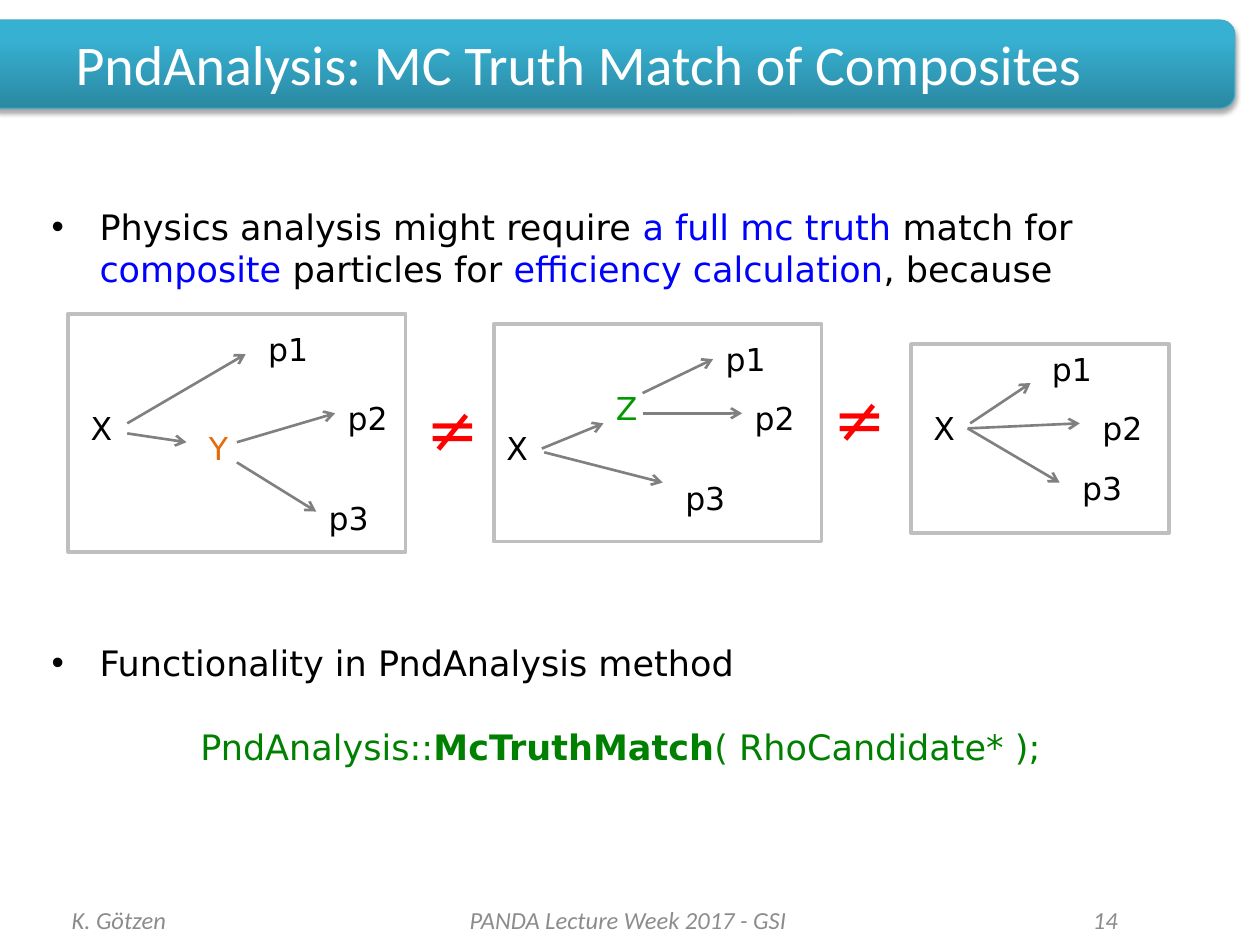
from pptx import Presentation
from pptx.dml.color import RGBColor
from pptx.enum.shapes import MSO_CONNECTOR as Line, MSO_SHAPE as Preset
from pptx.enum.text import MSO_ANCHOR as Anchor, MSO_AUTO_SIZE as Fit, PP_ALIGN as Align
from pptx.oxml import parse_xml
from pptx.oxml.ns import nsdecls
from pptx.util import Inches, Pt

WHITE = RGBColor(0xFF, 0xFF, 0xFF)
BLACK = RGBColor(0x00, 0x00, 0x00)
BLUE = RGBColor(0x00, 0x00, 0xFF)
GREEN = RGBColor(0x00, 0x80, 0x00)
LIGHT_GREEN = RGBColor(0x00, 0x99, 0x00)
ORANGE = RGBColor(0xE4, 0x6C, 0x0A)
RED = RGBColor(0xFF, 0x00, 0x00)
ARROW_GREY = RGBColor(0x80, 0x80, 0x80)
FRAME_GREY = RGBColor(0xBF, 0xBF, 0xBF)
FOOTER_GREY = RGBColor(0x8C, 0x8C, 0x8C)
TEAL_DARK = RGBColor(0x2A, 0x88, 0xA2)
TEAL_LIGHT = RGBColor(0x37, 0xB1, 0xD2)
TEAL_EDGE = RGBColor(0x46, 0xAA, 0xC5)

COLUMNS, ROWS = 100, 75
HEADING_FONT, TEXT_FONT = "Calibri", "DejaVu Sans"


class LecturePage:
    """Style and current slide; lengths are columns and rows of the grid."""

    def __init__(self, deck):
        self.column = deck.slide_width / COLUMNS
        self.row = deck.slide_height / ROWS
        self.page = deck.slides.add_slide(deck.slide_layouts[1])
        self.shapes = self.page.shapes

    def place(self, *cells):
        steps = (self.column, self.row) * 2
        return [round(cell * step) for cell, step in zip(cells, steps)]

    def move(self, box, cells):
        box.left, box.top, box.width, box.height = self.place(*cells)

    def add_span(self, para, text, size, color, font=TEXT_FONT, bold=False, italic=False):
        span = para.add_run()
        span.text = text
        span.font.name, span.font.size = font, Pt(size)
        span.font.bold, span.font.italic = bold, italic
        span.font.color.rgb = color

    def banner(self, cells):
        bar = self.shapes.add_shape(Preset.ROUNDED_RECTANGLE, *self.place(*cells))
        bar.fill.gradient()
        bar.fill.gradient_angle = 90
        stops = zip(bar.fill.gradient_stops, (0, 0.8), (TEAL_DARK, TEAL_LIGHT))
        for stop, position, color in stops:
            stop.position, stop.color.rgb = position, color
        bar.line.color.rgb, bar.line.width = TEAL_EDGE, Pt(0.75)
        bar._element.spPr.append(parse_xml(
            f'<a:effectLst {nsdecls("a")}><a:outerShdw blurRad="{Pt(3.1)}" '
            f'dist="{Pt(1.8)}" dir="5400000" rotWithShape="0"><a:srgbClr val="000000">'
            '<a:alpha val="35000"/></a:srgbClr></a:outerShdw></a:effectLst>'))
        # Behind the title
        self.shapes._spTree.insert(2, bar._element)

    def title(self, cells, text):
        box = self.shapes.title
        self.move(box, cells)
        frame = box.text_frame
        frame.auto_size, frame.vertical_anchor = Fit.NONE, Anchor.MIDDLE
        frame.paragraphs[0].alignment = Align.LEFT
        self.add_span(frame.paragraphs[0], text, 32, WHITE, HEADING_FONT)

    def body(self, cells, top_inset, items):
        box = self.page.placeholders[1]
        self.move(box, cells)
        frame = box.text_frame
        frame.auto_size, frame.margin_top = Fit.NONE, Inches(top_inset)
        for number, (gap, indent, bullet, spans) in enumerate(items):
            para = frame.add_paragraph() if number else frame.paragraphs[0]
            para.space_before, para.line_spacing = Pt(gap), 1.0
            props = para._p.get_or_add_pPr()
            props.set("marL", str(Inches(indent)))
            props.set("indent", str(Inches(-indent if bullet else 0)))
            mark = '<a:buChar {} char="•"/>' if bullet else "<a:buNone {}/>"
            props.append(parse_xml(mark.format(nsdecls("a"))))
            for text, color, bold in spans:
                self.add_span(para, text, 20, color, bold=bold)

    def label(self, cells, text, color=BLACK, size=18):
        box = self.shapes.add_textbox(*self.place(*cells))
        box.text_frame.word_wrap = False
        box.text_frame.auto_size = Fit.SHAPE_TO_FIT_TEXT
        self.add_span(box.text_frame.paragraphs[0], text, size, color)

    def arrow(self, cells):
        link = self.shapes.add_connector(Line.STRAIGHT, *self.place(*cells))
        link.line.color.rgb, link.line.width = ARROW_GREY, Pt(1.5)
        link.line._get_or_add_ln().append(
            parse_xml(f'<a:tailEnd {nsdecls("a")} type="arrow"/>'))
        link._element.spPr.append(parse_xml(f'<a:effectLst {nsdecls("a")}/>'))

    def frame(self, cells):
        border = self.shapes.add_shape(Preset.RECTANGLE, *self.place(*cells))
        border.shadow.inherit = False
        border.fill.background()
        border.line.color.rgb, border.line.width = FRAME_GREY, Pt(2)

    def decay(self, frame, particles, arrows):
        for left, top, name, color in particles:
            self.label((left, top, 5.2 if len(name) > 1 else 3.8, 4), name, color)
        for ends in arrows:
            self.arrow(ends)
        self.frame(frame)

    def footer(self, left, width, text, align):
        box = self.shapes.add_textbox(*self.place(left, 71, width, 4))
        box.text_frame.word_wrap = True
        box.text_frame.vertical_anchor = Anchor.MIDDLE
        para = box.text_frame.paragraphs[0]
        para.alignment = align
        self.add_span(para, text, 14, FOOTER_GREY, HEADING_FONT, italic=True)


# Each decay: frame, particles (left, top, name, colour), arrows (from, to)
DECAYS = [
    ((5.4, 24.9, 26.8, 18.9),
     [(6.2, 32, "X", BLACK), (20.3, 25.7, "p1", BLACK), (15.6, 33.6, "Y", ORANGE),
      (26.6, 31.2, "p2", BLACK), (25.1, 39.1, "p3", BLACK)],
     [(10.1, 33.6, 19.5, 28.1), (10.1, 34.4, 14.8, 35.1),
      (18.8, 35.1, 26.6, 32.8), (18.8, 36.7, 25.1, 40.6)]),
    ((39.2, 25.7, 26, 17.3),
     [(39.2, 33.6, "X", BLACK), (56.6, 26.5, "p1", BLACK), (47.9, 30.4, "Z", LIGHT_GREEN),
      (58.9, 31.2, "p2", BLACK), (53.4, 37.5, "p3", BLACK)],
     [(51, 31.2, 56.6, 28.5), (43, 35.6, 47.9, 33.6),
      (51, 32.8, 58.9, 32.8), (43.2, 35.9, 52.6, 38.3)]),
    ((72.3, 27.3, 20.5, 15),
     [(73.1, 32, "X", BLACK), (82.5, 27.3, "p1", BLACK),
      (86.5, 32, "p2", BLACK), (84.9, 36.7, "p3", BLACK)],
     [(77, 33.6, 81.8, 30.4), (76.8, 34, 85.7, 33.6), (76.8, 34, 84.1, 38.3)]),
]

# Each item: space before, indent, bullet, spans (text, colour, bold)
ITEMS = [
    (0, 0.38, True, [
        ("Physics analysis might require ", BLACK, False),
        ("a full mc truth ", BLUE, False), ("match for ", BLACK, False),
        ("composite", BLUE, False), (" particles for ", BLACK, False),
        ("efficiency calculation", BLUE, False), (", because", BLACK, False)]),
    (201, 0.38, True, [("Functionality in PndAnalysis method", BLACK, False)]),
    (24, 1.18, False, [
        ("PndAnalysis::", GREEN, False), ("McTruthMatch", GREEN, True),
        ("( RhoCandidate* );", GREEN, False)]),
]


def main():
    deck = Presentation()
    deck.slide_width, deck.slide_height = Inches(10), Inches(7.5)
    page = LecturePage(deck)

    # Heading and list
    page.banner((-1.2, 1.6, 99.2, 7))
    page.title((5, 1.8, 90, 6.4), "PndAnalysis: MC Truth Match of Composites")
    page.body((3.1, 11.7, 93.8, 57.8), 0.46, ITEMS)

    # Decay diagrams, set apart by unequal signs
    for decay in DECAYS:
        page.decay(*decay)
    for left, top in ((32.9, 30.4), (65.2, 29.6)):
        page.label((left, top, 6.2, 7.1), "≠", RED, 36)

    # Footer
    page.footer(4.7, 23.3, "K. Götzen", Align.LEFT)
    page.footer(30.3, 39.1, "PANDA Lecture Week 2017 - GSI", Align.CENTER)
    page.footer(75, 14.7, "14", Align.RIGHT)
    deck.save("out.pptx")


if __name__ == "__main__":
    main()
